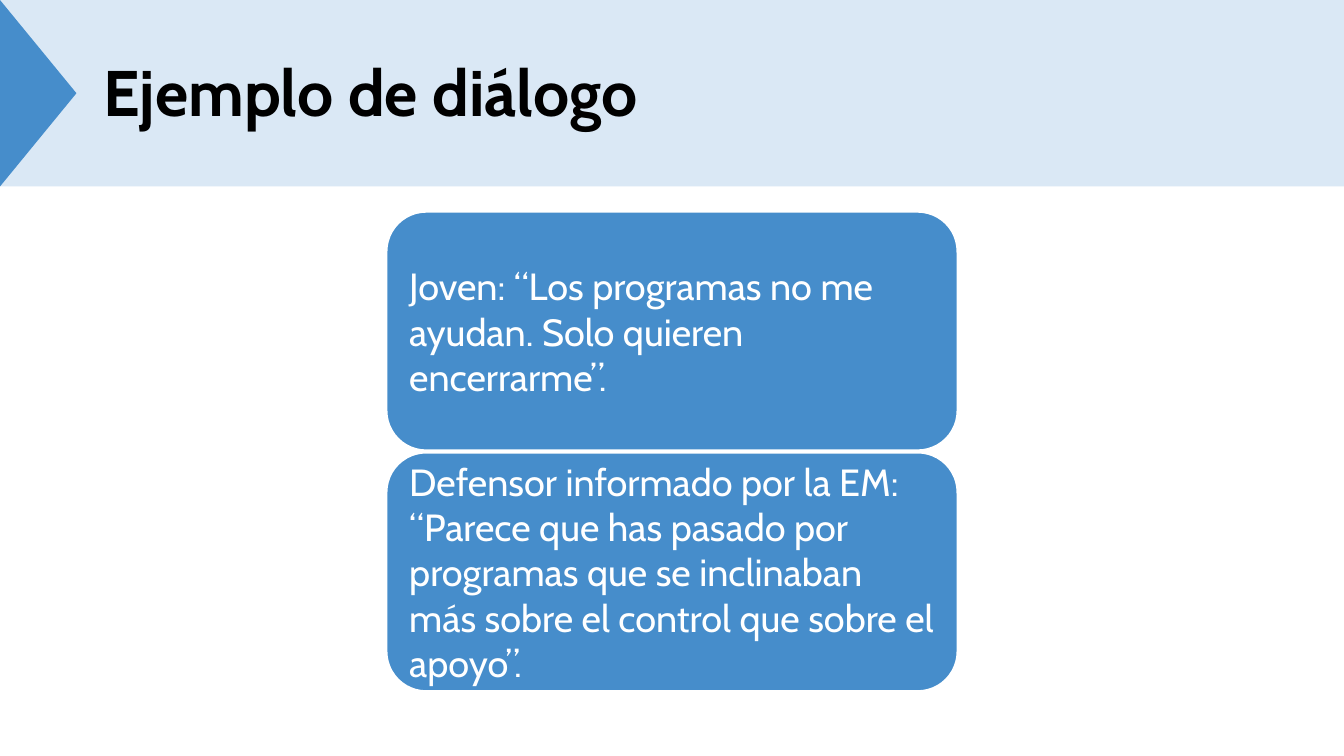
from pptx import Presentation
from pptx.dml.color import RGBColor
from pptx.enum import shapes, text
from pptx.util import Pt

BLUE = RGBColor(0x46, 0x8D, 0xCB)
PALE = RGBColor(0xDA, 0xE8, 0xF5)
WHITE = RGBColor(0xFF, 0xFF, 0xFF)
BLACK = RGBColor(0, 0, 0)
SHAPE = shapes.MSO_SHAPE

prs = Presentation()
prs.slide_width, prs.slide_height = Pt(960), Pt(540)
s = prs.slides.add_slide(prs.slide_layouts[5])


def add_box(kind, left, top, width, height, fill):
    sp = s.shapes.add_shape(kind, Pt(left), Pt(top), Pt(width), Pt(height))
    sp.shadow.inherit = False
    sp.fill.solid()
    sp.fill.fore_color.rgb = fill
    sp.line.fill.background()
    return sp


def write(sp, words, size, color, bold, inset, spacing):
    tf = sp.text_frame
    tf.text = words
    frame = {"word_wrap": True, "auto_size": text.MSO_AUTO_SIZE.NONE,
             "vertical_anchor": text.MSO_ANCHOR.MIDDLE}
    for side in ("left", "top", "right", "bottom"):
        frame["margin_" + side] = Pt(inset)
    for name, value in frame.items():
        setattr(tf, name, value)
    p = tf.paragraphs[0]
    p.alignment = text.PP_ALIGN.LEFT
    p.line_spacing = spacing
    r = p.runs[0]
    for name, value in {"name": "Cabin", "size": Pt(size), "bold": bold}.items():
        setattr(r.font, name, value)
    r.font.color.rgb = color


# Header band and arrow
add_box(SHAPE.RECTANGLE, 0, 0, 960, 133.2, PALE)
arrow = add_box(SHAPE.ISOSCELES_TRIANGLE, -39.3, 39.3, 133.2, 54.6, BLUE)
arrow.rotation = 90

# Title, brought in front of the band
title = s.shapes.title
s.shapes._spTree.append(title._element)
place = {"left": 66.6, "top": 15.8, "width": 828, "height": 104.4}
for name, value in place.items():
    setattr(title, name, Pt(value))
write(title, "Ejemplo de diálogo", 46, BLACK, True, 7.2, 0.9)

# Dialogue boxes
dialogue = [
    "Joven: “Los programas no me ayudan. Solo quieren encerrarme”.",
    "Defensor informado por la EM: “Parece que has pasado por programas "
    "que se inclinaban más sobre el control que sobre el apoyo”.",
]
for i, words in enumerate(dialogue):
    sp = add_box(SHAPE.ROUNDED_RECTANGLE, 276, 151.2 + i * 172, 408, 170.6, BLUE)
    sp.line.color.rgb = WHITE
    sp.line.width = Pt(1.5)
    write(sp, words, 27, WHITE, False, 8, 1.0)

prs.save("out.pptx")
